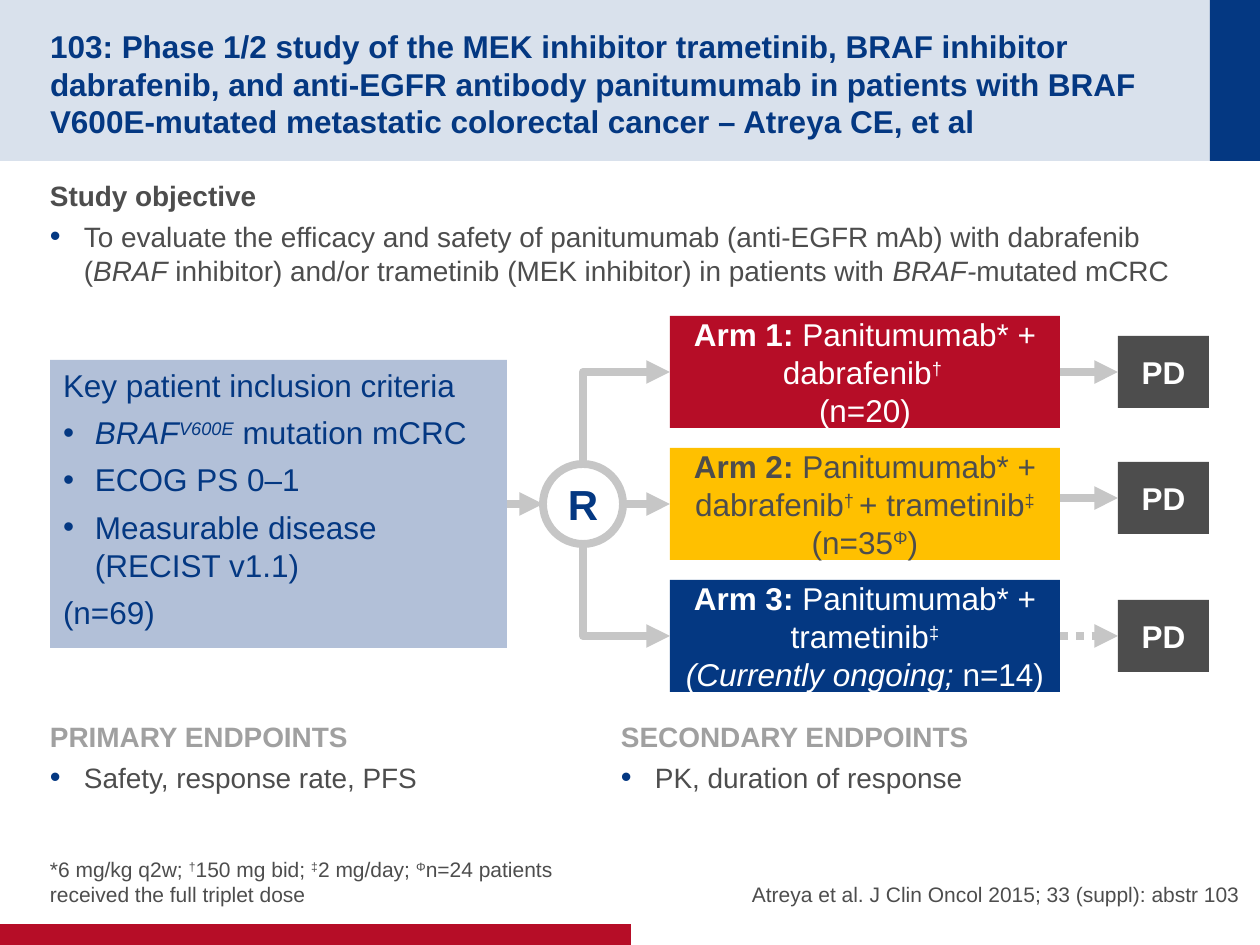
import pptx
import pptx.util
import pptx.dml.color
import pptx.enum.dml
import pptx.enum.shapes
import pptx.enum.text
import pptx.oxml.ns
from lxml import etree

RGBColor = pptx.dml.color.RGBColor
Shape = pptx.enum.shapes.MSO_SHAPE
Connector = pptx.enum.shapes.MSO_CONNECTOR
Anchor = pptx.enum.text.MSO_ANCHOR
Align = pptx.enum.text.PP_ALIGN
qn = pptx.oxml.ns.qn

NAVY = RGBColor(0x04, 0x38, 0x82)
RED = RGBColor(0xB6, 0x0D, 0x27)
AMBER = RGBColor(0xFF, 0xC0, 0x00)
PALE_BLUE = RGBColor(0xB2, 0xC0, 0xD8)
DARK_GREY = RGBColor(0x4D, 0x4D, 0x4D)
MID_GREY = RGBColor(0xA0, 0xA0, 0xA0)
LINE_GREY = RGBColor(0xC6, 0xC6, 0xC6)
WHITE = RGBColor(0xFF, 0xFF, 0xFF)

FONT = "Arial"
LINE_WIDTH = pptx.util.Pt(4.5)


def px(length):
    return pptx.util.Emu(round(length * 914400 / 126))


def set_frame(frame, insets=(0, 0, 0, 0), anchor=Anchor.TOP, wrap=True):
    frame.margin_left, frame.margin_top, frame.margin_right, frame.margin_bottom = map(px, insets)
    frame.vertical_anchor = anchor
    frame.word_wrap = wrap
    frame.auto_size = pptx.enum.text.MSO_AUTO_SIZE.NONE


def add_bullet(paragraph, indent, color, percent):
    properties = paragraph._p.get_or_add_pPr()
    properties.set("marL", str(px(indent)))
    properties.set("indent", str(-px(indent)))
    bullet_color = etree.SubElement(properties, qn("a:buClr"))
    etree.SubElement(bullet_color, qn("a:srgbClr"), val=str(color))
    etree.SubElement(properties, qn("a:buSzPct"), val=str(percent * 1000))
    etree.SubElement(properties, qn("a:buFont"), typeface=FONT)
    etree.SubElement(properties, qn("a:buChar"), char="•")


def write_paragraph(frame, runs, size, color, align=Align.LEFT, after=0):
    first = frame.paragraphs[0]
    paragraph = frame.add_paragraph() if first.runs else first
    paragraph.alignment = align
    paragraph.space_before = pptx.util.Pt(0)
    paragraph.space_after = pptx.util.Pt(after)
    for text, style in runs:
        run = paragraph.add_run()
        run.text = text
        run.font.name = FONT
        run.font.size = pptx.util.Pt(size)
        run.font.color.rgb = color
        run.font.bold = "b" in style
        run.font.italic = "i" in style
        if "s" in style:
            run._r.get_or_add_rPr().set("baseline", "30000")
    return paragraph


def add_box(slide, kind, box, fill=None):
    shape = slide.shapes.add_shape(kind, *map(px, box))
    shape.shadow.inherit = False
    shape.line.fill.background()
    if fill is None:
        shape.fill.background()
    else:
        shape.fill.solid()
        shape.fill.fore_color.rgb = fill
    return shape


def add_text(slide, box, insets=(0, 0, 0, 0), anchor=Anchor.TOP):
    frame = slide.shapes.add_textbox(*map(px, box)).text_frame
    set_frame(frame, insets, anchor)
    return frame


def add_arrow(slide, start, end, kind=Connector.STRAIGHT, arrow_end="a:tailEnd"):
    connector = slide.shapes.add_connector(kind, *map(px, start + end))
    connector.line.color.rgb = LINE_GREY
    connector.line.width = LINE_WIDTH
    etree.SubElement(connector.line._get_or_add_ln(), qn(arrow_end), type="triangle")
    etree.SubElement(connector._element.spPr, qn("a:effectLst"))
    return connector


def add_elbow(slide, start, end):
    connector = add_arrow(slide, end, start, Connector.ELBOW, "a:headEnd")
    connector._element.spPr.find(qn("a:prstGeom")).set("prst", "bentConnector2")


def add_header(slide, box, text):
    left, top, width, height = box
    band = add_box(slide, Shape.RECTANGLE, box, NAVY)
    color = band._element.spPr.find(qn("a:solidFill"))[0]
    etree.SubElement(color, qn("a:alpha"), val="15000")
    add_box(slide, Shape.RECTANGLE, (left + width - 50, top, 50, height), NAVY)
    title = slide.shapes.title
    title.left, title.top, title.width, title.height = map(px, (left + 50, top + 25, 1135, 111))
    set_frame(title.text_frame, (0, 6, 0, 0), Anchor.MIDDLE)
    write_paragraph(title.text_frame, [(text, "b")], 18, NAVY)
    slide.shapes._spTree.append(title._element)


def add_section(slide, box, heading, color, runs):
    frame = add_text(slide, box, (0, 6, 0, 6))
    write_paragraph(frame, [(heading, "b")], 16, color, after=4)
    paragraph = write_paragraph(frame, runs, 16, DARK_GREY, after=4)
    add_bullet(paragraph, 34, NAVY, 110)


def add_criteria(slide, box):
    shape = add_box(slide, Shape.RECTANGLE, box, PALE_BLUE)
    frame = shape.text_frame
    set_frame(frame, (13, 6, 13, 6))
    lines = [
        ([("Key patient inclusion criteria", "")], False),
        ([("BRAF", "i"), ("V600E", "is"), (" mutation mCRC", "")], True),
        ([("ECOG PS 0–1", "")], True),
        ([("Measurable disease (RECIST v1.1)", "")], True),
        ([("(n=69)", "")], False),
    ]
    for runs, bulleted in lines:
        paragraph = write_paragraph(frame, runs, 18, NAVY, after=5.4)
        if bulleted:
            add_bullet(paragraph, 32, NAVY, 100)
    return shape


def add_label_box(slide, box, fill, color, paragraphs):
    shape = add_box(slide, Shape.RECTANGLE, box, fill)
    set_frame(shape.text_frame, (13, 0, 13, 0), Anchor.MIDDLE)
    for runs in paragraphs:
        write_paragraph(shape.text_frame, runs, 18, color, Align.CENTER)
    return shape


def add_arm(slide, box, fill, color, paragraphs, outcome_shift, dashed):
    left, top, width, height = box
    arm = add_label_box(slide, box, fill, color, paragraphs)
    middle = top + height // 2 + outcome_shift
    outcome = add_label_box(slide, (left + 448, middle - 36, 91, 72), DARK_GREY, WHITE, [[("PD", "b")]])
    arrow = add_arrow(slide, (left + width, middle), (left + 448, middle))
    if outcome_shift == 0:
        arrow.begin_connect(arm, 3)
    arrow.end_connect(outcome, 1)
    if dashed:
        arrow.line.dash_style = pptx.enum.dml.MSO_LINE.ROUND_DOT
    return arm


def add_trial_diagram(slide, box):
    left, top, width, height = box
    criteria = add_criteria(slide, (left, top + 44, 457, 288))
    center_x, center_y, radius = left + 533, top + height // 2, 40
    arms = [
        (RED, WHITE, [[("Arm 1: ", "b"), ("Panitumumab* + dabrafenib", ""), ("† ", "s")],
                      [("(n=20)", "")]], 0, False),
        (AMBER, DARK_GREY, [[("Arm 2: ", "b"), ("Panitumumab* + dabrafenib", ""), ("† ", "s"),
                             ("+ trametinib", ""), ("‡", "s")],
                            [("(n=35", ""), ("Φ", "s"), (")", "")]], -6, False),
        (NAVY, WHITE, [[("Arm 3: ", "b"), ("Panitumumab* +", "")],
                       [("trametinib", ""), ("‡", "s")],
                       [("(Currently ongoing; ", "i"), ("n=14)", "")]], 0, True),
    ]
    arm_left, arm_height = left + 620, 112
    pitch = (height - arm_height) // 2
    shapes = [add_arm(slide, (arm_left, top + index * pitch, 390, arm_height), *arm)
              for index, arm in enumerate(arms)]
    for side in (-1, 1):
        add_elbow(slide, (center_x, center_y + side * radius), (arm_left, center_y + side * pitch))
    add_arrow(slide, (left + 457, center_y), (center_x - radius, center_y)).begin_connect(criteria, 3)
    add_arrow(slide, (center_x + radius, center_y), (arm_left, center_y)).end_connect(shapes[1], 1)
    circle = add_box(slide, Shape.OVAL, (center_x - radius, center_y - radius, 2 * radius, 2 * radius))
    circle.line.color.rgb = LINE_GREY
    circle.line.width = LINE_WIDTH
    set_frame(circle.text_frame, anchor=Anchor.MIDDLE, wrap=False)
    write_paragraph(circle.text_frame, [("R", "b")], 24, NAVY, Align.CENTER)


def add_footer(slide, box):
    left, top, width, height = box
    notes = add_text(slide, (left + 50, top, 570, 67), anchor=Anchor.BOTTOM)
    write_paragraph(notes, [("*6 mg/kg q2w; ", ""), ("†", "s"), ("150 mg bid; ", ""), ("‡", "s"),
                            ("2 mg/day; ", ""), ("Φ", "s"),
                            ("n=24 patients received the full triplet dose", "")], 12, DARK_GREY)
    citation = add_text(slide, (left + 670, top, 570, 67), anchor=Anchor.BOTTOM)
    write_paragraph(citation, [("Atreya et al. J Clin Oncol 2015; 33 (suppl): abstr 103", "")],
                    12, DARK_GREY, Align.RIGHT)
    add_box(slide, Shape.RECTANGLE, (left, top + height - 21, 631, 21), RED)


def main():
    presentation = pptx.Presentation()
    presentation.slide_width, presentation.slide_height = px(1260), px(945)
    slide = presentation.slides.add_slide(presentation.slide_layouts[5])
    add_header(slide, (0, 0, 1260, 161),
               "103: Phase 1/2 study of the MEK inhibitor trametinib, BRAF inhibitor dabrafenib, "
               "and anti-EGFR antibody panitumumab in patients with BRAF V600E-mutated metastatic "
               "colorectal cancer – Atreya CE, et al")
    add_section(slide, (50, 173, 1159, 130), "Study objective", DARK_GREY, [
        ("To evaluate the efficacy and safety of panitumumab (anti-EGFR mAb) with dabrafenib (", ""),
        ("BRAF", "i"), (" inhibitor) and/or trametinib (MEK inhibitor) in patients with ", ""),
        ("BRAF-", "i"), ("mutated mCRC", "")])
    add_trial_diagram(slide, (50, 316, 1159, 376))
    add_section(slide, (50, 714, 570, 107), "PRIMARY ENDPOINTS", MID_GREY,
                [("Safety, response rate, PFS", "")])
    add_section(slide, (621, 714, 570, 107), "SECONDARY ENDPOINTS", MID_GREY,
                [("PK, duration of response", "")])
    add_footer(slide, (0, 840, 1260, 105))
    presentation.save("out.pptx")


if __name__ == "__main__":
    main()
